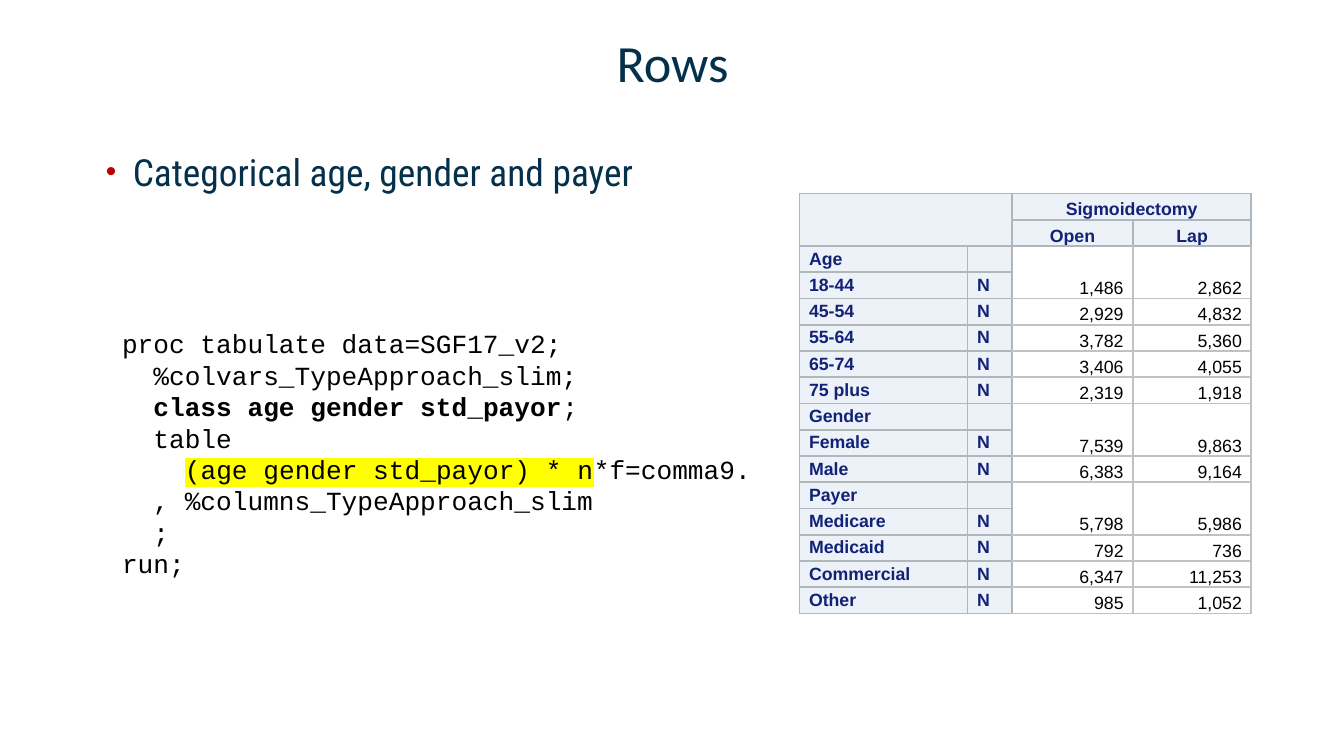
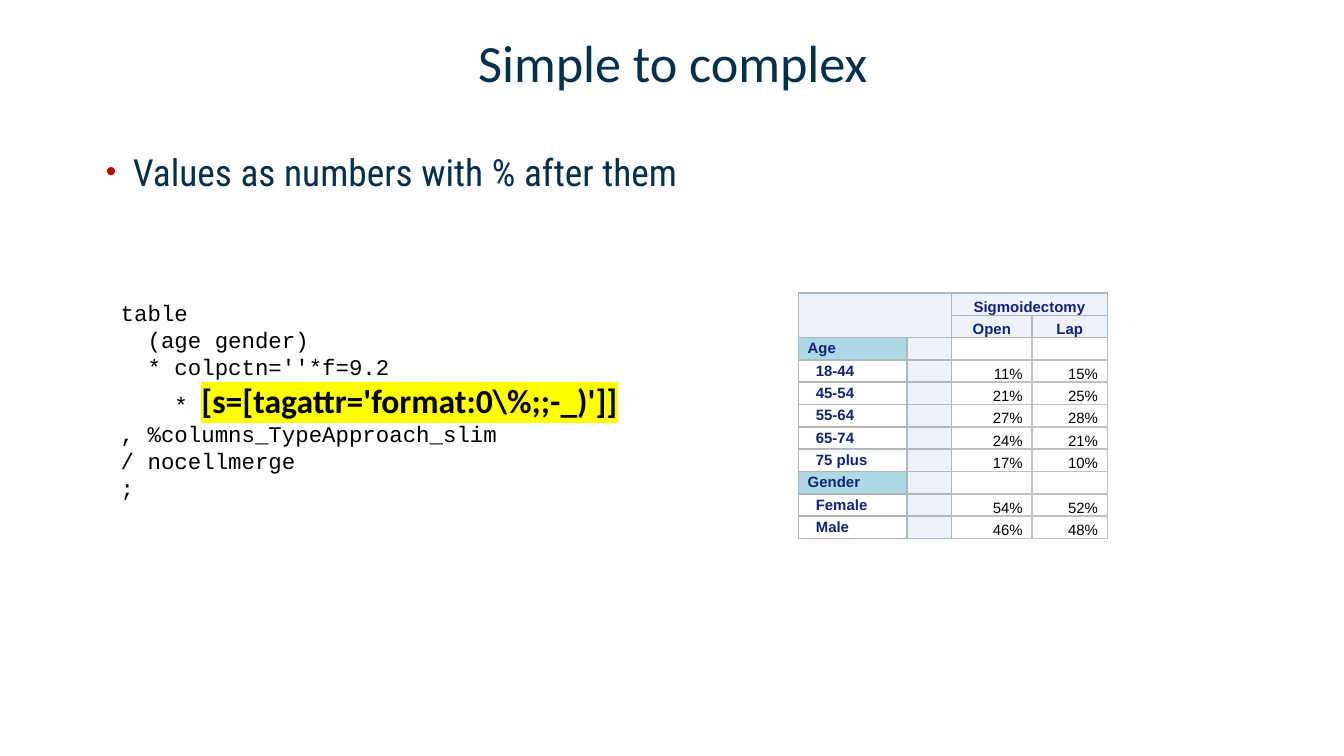
from dataclasses import dataclass

from lxml.etree import SubElement
from pptx import Presentation
from pptx.dml.color import RGBColor
from pptx.enum.text import MSO_ANCHOR as Anchor, MSO_AUTO_SIZE as AutoSize, PP_ALIGN as Align
from pptx.oxml.ns import qn
from pptx.util import Inches, Pt


@dataclass(frozen=True)
class Theme:
    navy: str = "04304B"
    red: str = "C00000"
    black: str = "000000"
    white: str = "FFFFFF"
    yellow: str = "FFFF00"
    label: str = "112277"
    header: str = "EDF2F9"
    group: str = "ADD8E6"
    header_edge: str = "B0B7BB"
    value_edge: str = "C1C1C1"
    title_font: str = "Calibri"
    body_font: str = "Roboto Condensed"
    code_font: str = "Courier New"
    table_font: str = "Arial"
    title_size: float = 28
    body_size: float = 20
    callout_size: float = 18
    large_code: float = 14
    small_code: float = 12
    large_table: float = 9.5
    small_table: float = 8


THEME = Theme()


class Deck:
    """Holds the theme and the current slide and draws each kind of element."""

    def __init__(self, theme):
        self.theme = theme
        self.show = Presentation()
        self.show.slide_width = Inches(10)
        self.show.slide_height = Inches(10) * 9 // 16
        self.slide = None

    def start(self, title, point):
        self.slide = self.show.slides.add_slide(self.show.slide_layouts[6])
        self.title(title)
        self.bullet(point)

    def style(self, run, font, size, color, bold=False):
        run.font.name, run.font.size, run.font.bold = font, Pt(size), bold
        run.font.color.rgb = RGBColor.from_string(color)

    def color_node(self, parent, tag, color):
        node = SubElement(parent, qn(tag))
        SubElement(node, qn("a:srgbClr")).set("val", color)
        return node

    def text_box(self, at):
        frame = self.slide.shapes.add_textbox(*map(Inches, at)).text_frame
        frame.word_wrap = True
        return frame

    def title(self, text):
        t = self.theme
        frame = self.text_box((0.69, 0.21, 8.63, 0.5))
        frame.text = text
        frame.vertical_anchor = Anchor.MIDDLE
        heading = frame.paragraphs[0]
        heading.alignment = Align.CENTER
        self.style(heading.runs[0], t.title_font, t.title_size, t.navy)

    def bullet(self, text):
        t = self.theme
        frame = self.text_box((0.69, 1.11, 8.63, 3.98))
        frame.text = text
        point = frame.paragraphs[0]
        props = point._p.get_or_add_pPr()
        props.set("marL", str(Inches(0.2)))
        props.set("indent", str(-Inches(0.2)))
        self.color_node(props, "a:buClr", t.red)
        SubElement(props, qn("a:buSzPct")).set("val", "80000")
        SubElement(props, qn("a:buFont")).set("typeface", t.table_font)
        SubElement(props, qn("a:buChar")).set("char", "•")
        point.line_spacing = 0.85
        self.style(point.runs[0], t.body_font, t.body_size, t.navy)

    def highlight(self, run):
        fill = run.font._element.find(qn("a:solidFill"))
        fill.addnext(self.color_node(run.font._element, "a:highlight", self.theme.yellow))

    def code(self, lines, at, size):
        t = self.theme
        frame = self.text_box(at)
        frame.auto_size = AutoSize.SHAPE_TO_FIT_TEXT
        for number, line in enumerate(lines):
            paragraph = frame.add_paragraph() if number else frame.paragraphs[0]
            for text, kind in [(line, "plain")] if isinstance(line, str) else line:
                run = paragraph.add_run()
                run.text = text
                if kind == "callout":
                    self.style(run, t.title_font, t.callout_size, t.black, True)
                else:
                    self.style(run, t.code_font, size, t.black, kind == "bold")
                if kind in ("marked", "callout"):
                    self.highlight(run)

    def cell(self, cell, text, size, fill, color, align=Align.LEFT,
             anchor=Anchor.TOP, bold=True, indent=0, edges=None):
        cell.text = text
        cell.margin_left, cell.margin_right = Inches(0.07 + indent), Inches(0.07)
        cell.margin_top = cell.margin_bottom = 0
        cell.vertical_anchor = anchor
        cell.fill.solid()
        cell.fill.fore_color.rgb = RGBColor.from_string(fill)
        paragraph = cell.text_frame.paragraphs[0]
        paragraph.alignment, paragraph.line_spacing = align, 1.15
        for run in paragraph.runs:
            self.style(run, self.theme.table_font, size, color, bold)
        if not text:
            paragraph._p.get_or_add_endParaRPr().set("sz", str(int(size * 100)))
        props = cell._tc.get_or_add_tcPr()
        for place, side in enumerate("LRTB"):
            edge = SubElement(props, qn(f"a:ln{side}"))
            edge.set("w", str(Pt(1)))
            self.color_node(edge, "a:solidFill", (edges or {}).get(side, self.theme.header_edge))
            props.insert(place, edge)

    def table(self, groups, at, widths, size, unit="", merged=False,
              group_fill=THEME.header, label_fill=THEME.header, indent=0):
        t = self.theme
        count = 2 + sum(1 + len(entries) for _, entries in groups)
        grid = self.slide.shapes.add_table(count, 4, *map(Inches, at)).table
        grid.first_row = grid.horz_banding = False
        for column, width in zip(grid.columns, widths):
            column.width = Inches(width)
        for row, names in enumerate([("", "", "Sigmoidectomy", ""), ("", "", "Open", "Lap")]):
            for column, name in enumerate(names):
                self.cell(grid.cell(row, column), name, size, t.header, t.label,
                          Align.CENTER, Anchor.BOTTOM)
        grid.cell(0, 0).merge(grid.cell(1, 1))
        grid.cell(0, 2).merge(grid.cell(0, 3))

        row = 2
        for heading, entries in groups:
            first, *others = entries
            lead = first[1:] if merged else ("", "")
            below = ("", "") if merged else first[1:]
            body = [(heading, *lead), (first[0], *below), *others]
            for offset, (label, *values) in enumerate(body):
                is_group = offset == 0
                self.cell(grid.cell(row + offset, 0), label, size,
                          group_fill if is_group else label_fill, t.label,
                          indent=0 if is_group else indent)
                self.cell(grid.cell(row + offset, 1), "" if is_group else unit,
                          size, t.header, t.label)
                for column, value in enumerate(values, 2):
                    edges = dict.fromkeys("LRTB", t.value_edge)
                    if column == 2:
                        edges["L"] = t.header_edge
                    if row + offset == 2:
                        edges["T"] = t.header_edge
                    self.cell(grid.cell(row + offset, column), value, size, t.white, t.black,
                              Align.RIGHT, Anchor.BOTTOM, False, edges=edges)
            if merged:
                for column in (2, 3):
                    grid.cell(row, column).merge(grid.cell(row + 1, column))
            row += len(body)


def rows_slide(deck):
    deck.start("Rows", "Categorical age, gender and payer")
    deck.code([
        "proc tabulate data=SGF17_v2;",
        "  %colvars_TypeApproach_slim;",
        [("  ", "plain"), ("class age gender std_payor", "bold"), (";", "plain")],
        "  table",
        [("    ", "plain"), ("(age gender std_payor) * n", "marked"), ("*f=comma9.", "plain")],
        "  , %columns_TypeApproach_slim",
        "  ;",
        "run;",
    ], (0.81, 2.39, 4.97, 1.99), THEME.large_code)
    deck.table([
        ("Age", [("18-44", "1,486", "2,862"), ("45-54", "2,929", "4,832"),
                 ("55-64", "3,782", "5,360"), ("65-74", "3,406", "4,055"),
                 ("75 plus", "2,319", "1,918")]),
        ("Gender", [("Female", "7,539", "9,863"), ("Male", "6,383", "9,164")]),
        ("Payer", [("Medicare", "5,798", "5,986"), ("Medicaid", "792", "736"),
                   ("Commercial", "6,347", "11,253"), ("Other", "985", "1,052")]),
    ], (5.95, 1.44, 3.36, 3.13), (1.25, 0.33, 0.9, 0.88), THEME.large_table,
        unit="N", merged=True)


def percent_slide(deck):
    deck.start("Simple to complex", "Values as numbers with % after them")
    deck.code([
        "table",
        "  (age gender)",
        "  * colpctn=''*f=9.2",
        [("    * ", "plain"), (r"[s=[tagattr='format:0\%;;-_)']]", "callout")],
        ", %columns_TypeApproach_slim",
        "/ nocellmerge",
        ";",
    ], (0.8, 2.18, 4.88, 1.62), THEME.small_code)
    deck.table([
        ("Age", [("18-44", "11%", "15%"), ("45-54", "21%", "25%"), ("55-64", "27%", "28%"),
                 ("65-74", "24%", "21%"), ("75 plus", "17%", "10%")]),
        ("Gender", [("Female", "54%", "52%"), ("Male", "46%", "48%")]),
    ], (5.94, 2.18, 2.3, 1.83), (0.81, 0.33, 0.6, 0.56), THEME.small_table,
        group_fill=THEME.group, label_fill=THEME.white, indent=0.06)


def main():
    deck = Deck(THEME)
    rows_slide(deck)
    percent_slide(deck)
    deck.show.save("out.pptx")


if __name__ == "__main__":
    main()
